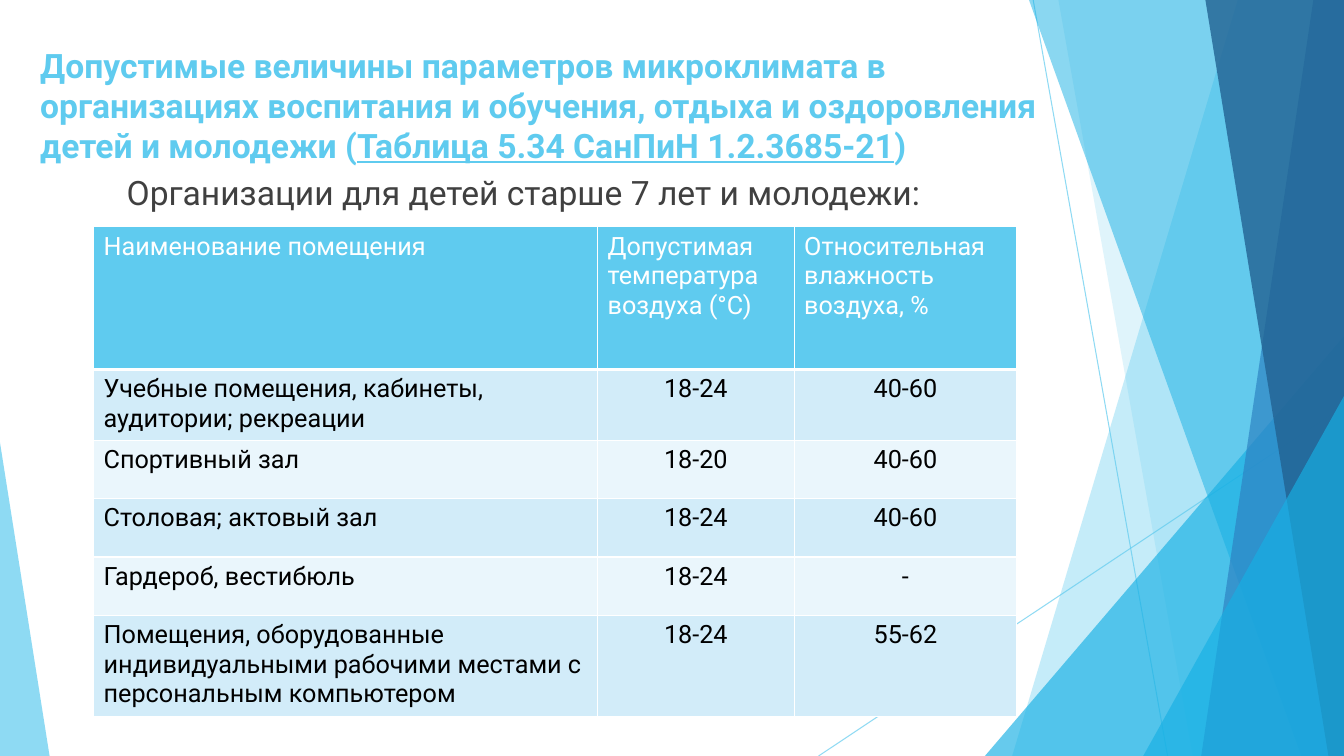
import pptx
import pptx.dml.color
import pptx.enum.shapes
import pptx.enum.text
import pptx.oxml
import pptx.oxml.ns
import pptx.util

RGB = pptx.dml.color.RGBColor
SKY = RGB(0x5F, 0xCB, 0xEF)
AQUA = RGB(0x17, 0xB0, 0xE4)
BLUE = RGB(0x2E, 0x83, 0xC3)
NAVY = RGB(0x22, 0x62, 0x92)
GRAY = RGB(0x40, 0x40, 0x40)
BLACK = RGB(0, 0, 0)
WHITE = RGB(0xFF, 0xFF, 0xFF)
BAND = RGB(0xD2, 0xEC, 0xF9)
PALE = RGB(0xEA, 0xF6, 0xFC)

COLS, ROWS = 32, 18
NS = pptx.oxml.ns.nsdecls("a")


class Page:
    """A slide measured on a grid of 32 columns by 18 rows."""

    def __init__(self, deck):
        self.font = "Roboto"
        self.slide = deck.slides.add_slide(deck.slide_layouts[6])
        self.shapes = self.slide.shapes
        self.wide, self.high = deck.slide_width, deck.slide_height

    def x(self, col):
        return round(self.wide * col / COLS)

    def y(self, row):
        return round(self.high * row / ROWS)

    def area(self, left, top, width, height):
        return self.x(left), self.y(top), self.x(width), self.y(height)

    def fade(self, shape, share):
        """Set the opacity, in percent, of a shape's only colour."""
        for node in shape.element.xpath("./p:spPr//a:srgbClr"):
            node.append(pptx.oxml.parse_xml(f'<a:alpha {NS} val="{share * 1000}"/>'))

    def paint(self, shape, color, share):
        shape.shadow.inherit = False
        shape.line.fill.background()
        shape.fill.solid()
        shape.fill.fore_color.rgb = color
        self.fade(shape, share)

    def line(self, start, end):
        line = self.shapes.add_connector(
            pptx.enum.shapes.MSO_CONNECTOR.STRAIGHT,
            self.x(start[0]), self.y(start[1]), self.x(end[0]), self.y(end[1]))
        line.line.color.rgb = SKY
        line.line.width = pptx.util.Pt(0.75)
        self.fade(line, 70)
        line.element.spPr.append(pptx.oxml.parse_xml(f"<a:effectLst {NS}/>"))

    def facet(self, top, base, color, share):
        """Fill from a slanted edge to the right side of the slide."""
        path = self.shapes.build_freeform(self.x(top), 0, scale=1.0)
        path.add_line_segments([(self.wide, 0), (self.wide, self.high),
                                (self.x(base), self.high)], close=True)
        self.paint(path.convert_to_shape(), color, share)

    def wedge(self, left, top, width, tip, color, share):
        """Draw a triangle that stands on the bottom of the slide."""
        shape = self.shapes.add_shape(
            pptx.enum.shapes.MSO_SHAPE.ISOSCELES_TRIANGLE,
            *self.area(left, top, width, ROWS - top))
        shape.adjustments[0] = tip
        self.paint(shape, color, share)

    def style(self, run, size, color, bold=False, under=False):
        font = run.font
        font.name, font.size = self.font, pptx.util.Pt(size)
        font.color.rgb, font.bold, font.underline = color, bold, under

    def text(self, place, parts, color, bold=False, indent=0):
        """Write one paragraph; every second part is underlined."""
        frame = self.shapes.add_textbox(*self.area(*place)).text_frame
        frame.word_wrap = True
        para = frame.paragraphs[0]
        if indent:
            para._p.get_or_add_pPr().set("marL", str(self.x(indent)))
        for num, part in enumerate(parts):
            run = para.add_run()
            run.text = part
            self.style(run, 24, color, bold, num % 2 == 1)

    def edge(self, cell, row):
        """Rule a cell in white, thicker under the header."""
        thick = {"T": 3 if row == 1 else 1, "B": 3 if row == 0 else 1}
        for side in "LRTB":
            width = pptx.util.Pt(thick.get(side, 1))
            cell._tc.get_or_add_tcPr().append(pptx.oxml.parse_xml(
                f'<a:ln{side} {NS} w="{width}"><a:solidFill>'
                f'<a:srgbClr val="{WHITE}"/></a:solidFill></a:ln{side}>'))

    def table(self, left, top, widths, heights, data):
        place = self.area(left, top, sum(widths), sum(heights))
        table = self.shapes.add_table(len(heights), len(widths), *place).table
        for col, width in zip(table.columns, widths):
            col.width = self.x(width)
        for row, height in zip(table.rows, heights):
            row.height = self.y(height)
        for r, words in enumerate(data):
            fill = SKY if r == 0 else BAND if r % 2 else PALE
            for c, word in enumerate(words):
                cell = table.cell(r, c)
                self.edge(cell, r)
                cell.fill.solid()
                cell.fill.fore_color.rgb = fill
                cell.text_frame.text = word
                para = cell.text_frame.paragraphs[0]
                if r and c:
                    para.alignment = pptx.enum.text.PP_ALIGN.CENTER
                self.style(para.runs[0], 18, BLACK if r else WHITE)


def main():
    deck = pptx.Presentation()
    deck.slide_width = pptx.util.Inches(13.33)
    deck.slide_height = pptx.util.Inches(7.5)
    page = Page(deck)

    page.line((24.6, 0), (27.8, ROWS))
    page.line((COLS, 9.67), (19.49, ROWS))
    page.facet(29.47, 24.1, SKY, 36)
    page.facet(25.2, 28.4, SKY, 20)
    page.wedge(23.45, 8, 8.55, 1, AQUA, 66)
    page.facet(24.5, 30.98, AQUA, 50)
    page.facet(31.27, 28.6, BLUE, 70)
    page.facet(28.7, 31.63, NAVY, 80)
    page.wedge(27.22, 9.43, 4.78, 1, AQUA, 66)
    page.wedge(0, 10.54, 1.18, 0, SKY, 70)

    page.text((0.72, 0.94, 25.37, 3.96), [
        "Допустимые величины параметров микроклимата в организациях "
        "воспитания и обучения, отдыха и оздоровления детей и молодежи (",
        "Таблица 5.34 СанПиН 1.2.3685-21", ")"], SKY, bold=True)
    page.text((1.58, 3.98, 23.04, 7.03),
              ["Организации для детей старше 7 лет и молодежи:"], GRAY, indent=1.2)

    page.table(2.23, 5.4, [12, 4.68, 5.3], [3.4, 1.68, 1.39, 1.39, 1.39, 2.4], [
        ("Наименование помещения", "Допустимая температура воздуха (°С)",
         "Относительная влажность воздуха, %"),
        ("Учебные помещения, кабинеты, аудитории; рекреации", "18-24", "40-60"),
        ("Спортивный зал", "18-20", "40-60"),
        ("Столовая; актовый зал", "18-24", "40-60"),
        ("Гардероб, вестибюль", "18-24", "-"),
        ("Помещения, оборудованные индивидуальными рабочими местами "
         "с персональным компьютером", "18-24", "55-62"),
    ])
    deck.save("out.pptx")


if __name__ == "__main__":
    main()
